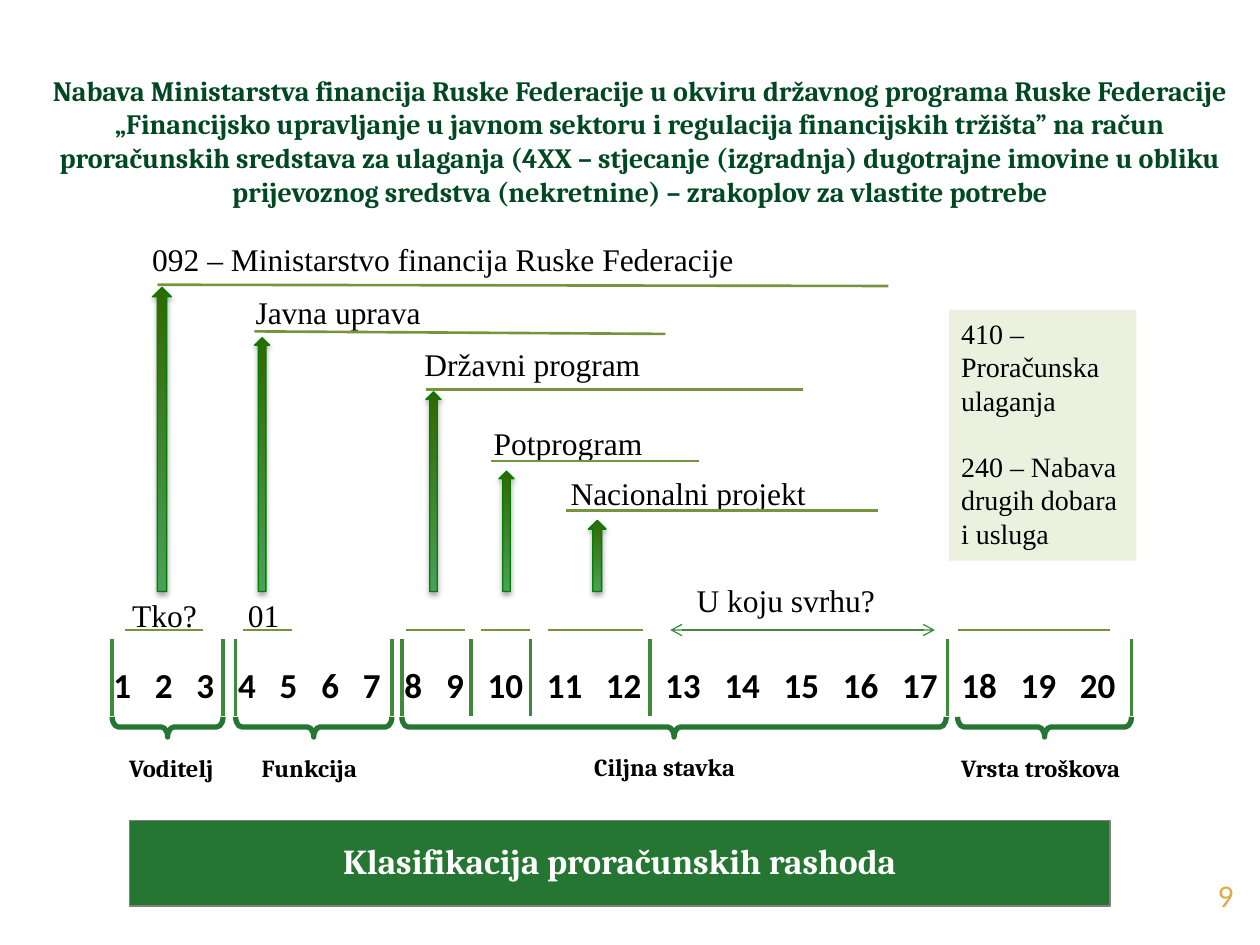
from lxml import etree
from pptx import Presentation
from pptx.dml.color import RGBColor
from pptx.enum.shapes import MSO_CONNECTOR, MSO_SHAPE
from pptx.enum.text import MSO_ANCHOR, MSO_AUTO_SIZE, PP_ALIGN
from pptx.oxml.ns import qn
from pptx.util import Inches, Pt

STRAIGHT = MSO_CONNECTOR.STRAIGHT
RECTANGLE, BRACE, ARROW = MSO_SHAPE.RECTANGLE, MSO_SHAPE.RIGHT_BRACE, MSO_SHAPE.DOWN_ARROW
TOP, MIDDLE = MSO_ANCHOR.TOP, MSO_ANCHOR.MIDDLE
LEFT, CENTER, RIGHT = PP_ALIGN.LEFT, PP_ALIGN.CENTER, PP_ALIGN.RIGHT
GROW, FIXED = MSO_AUTO_SIZE.SHAPE_TO_FIT_TEXT, MSO_AUTO_SIZE.NONE

BLACK = RGBColor(0x00, 0x00, 0x00)
WHITE = RGBColor(0xFF, 0xFF, 0xFF)
GRAY = RGBColor(0x80, 0x80, 0x80)
GOLD = RGBColor(0xDE, 0xAA, 0x46)
TITLE_GREEN = RGBColor(0x00, 0x48, 0x21)
DARK_GREEN = RGBColor(0x24, 0x76, 0x32)
DIVIDER_GREEN = RGBColor(0x3E, 0x8A, 0x3A)
OLIVE = RGBColor(0x77, 0x93, 0x3C)
PALE_GREEN = RGBColor(0xEB, 0xF1, 0xDE)
ARROW_EDGE = RGBColor(0x00, 0x80, 0x00)
ARROW_STOPS = RGBColor(0x33, 0x66, 0x00), RGBColor(0x4A, 0xA0, 0x5A)

WIDTH, HEIGHT = Inches(10), Inches(7.5)
COLUMNS, ROWS = 100, 75

TITLE_FONT = {"name": "Cambria", "size": Pt(16), "bold": True}
GROUP_FONT = {"name": "Cambria", "size": Pt(14), "bold": True}
BANNER_FONT = {"name": "Cambria", "size": Pt(20), "bold": True}
LABEL_FONT = {"name": "Times New Roman", "size": Pt(18)}
NOTE_FONT = {"name": "Times New Roman", "size": Pt(16)}
DIGIT_FONT = {"name": "Calibri", "size": Pt(20), "bold": True}
PAGE_FONT = {"name": "Calibri", "size": Pt(18)}

TITLE = (
    "Nabava Ministarstva financija Ruske Federacije u okviru državnog programa "
    "Ruske Federacije „Financijsko upravljanje u javnom sektoru i regulacija "
    "financijskih tržišta” na račun proračunskih sredstava za ulaganja (4XX – "
    "stjecanje (izgradnja) dugotrajne imovine u obliku prijevoznog sredstva "
    "(nekretnine) – zrakoplov za vlastite potrebe"
)
GROUPS = [
    ("Voditelj", (8.9, 59.3, 9.4, 3.4), (8.9, 17.7)),
    ("Funkcija", (14.7, 59.3, 19.7, 3.4), (18.7, 31.1)),
    ("Ciljna stavka", (37.4, 59.2, 30.7, 3.4), (31.9, 75.1)),
    ("Vrsta troškova", (75.1, 59.3, 15, 3.3), (76, 89.8)),
]
LEVELS = [
    ("092 – Ministarstvo financija Ruske Federacije", (11.1, 18.6, 61),
     (12.5, 22.6, 70.5, 22.7), (12.1, 22.8, 1.5)),
    ("Javna uprava", (19.3, 22.8, 35.4), (20.2, 26.3, 52.8, 26.5), (20.2, 26.8, 1.2)),
    ("Državni program", (32.7, 26.9, 33.1), (33.8, 30.9, 63.7, 30.9), (33.8, 31.1, 1.2)),
    ("Potprogram", (38.2, 33.2, 19.7), (39, 36.6, 55.5, 36.6), (39.6, 37.4, 1.2)),
    ("Nacionalni projekt", (44.3, 37.1, 26.2), (44.9, 40.5, 69.7, 40.5), (46.7, 41.3, 1.4)),
]
ANSWERS = [("Tko?", 9.5, 46.8, 8.2), ("01", 18.7, 46.8, 5.3), ("U koju svrhu?", 54.3, 45.6, 19.3)]
DIGIT_MARKS = [(9.9, 16.1), (19.3, 23.2), (32.2, 36.9), (38.2, 42.1), (43.5, 51), (76, 88.1)]
DIVIDERS = [8.9, 17.7, 18.7, 31.1, 31.9, 37.4, 42.1, 51.6, 75.2, 89.8]
ARROW_BASE, LABEL_ROWS, MARK_ROW = 46.95, 4, 50
DIVIDER_TOP, DIVIDER_BOTTOM = 50.75, 56.85
BRACE_MIDDLE, BRACE_DEPTH = 57.7, 1.6


def column(count):
    """Return the distance spanned by a number of grid columns."""
    return round(WIDTH * count / COLUMNS)


def row(count):
    """Return the distance spanned by a number of grid rows."""
    return round(HEIGHT * count / ROWS)


def grid_box(left, top, width, height):
    """Turn grid units into a shape's position and size."""
    return column(left), row(top), column(width), row(height)


def apply_format(target, values):
    """Set each attribute of the target from a dict."""
    for name, value in values.items():
        setattr(target, name, value)


def write_text(shape, lines, font, color, align=LEFT, gap=0, frame=None):
    """Write one paragraph per line, with a gap between paragraphs."""
    text_frame = shape.text_frame
    apply_format(text_frame, {"word_wrap": True, "auto_size": GROW,
                              "vertical_anchor": TOP, **(frame or {})})
    for index, line in enumerate(lines):
        paragraph = text_frame.add_paragraph() if index else text_frame.paragraphs[0]
        paragraph.alignment = align
        if index:
            paragraph.space_before = Pt(gap)
        run = paragraph.add_run()
        run.text = line
        apply_format(run.font, font)
        run.font.color.rgb = color


def add_text(slide, text, box, font, color=BLACK, align=LEFT, frame=None):
    """Add a text box with one paragraph and return it."""
    shape = slide.shapes.add_textbox(*grid_box(*box))
    write_text(shape, [text], font, color, align, frame=frame)
    return shape


def add_shape(slide, kind, box, fill=None, line=None, points=0.75):
    """Add a preset shape without a shadow and with explicit fill and line."""
    shape = slide.shapes.add_shape(kind, *grid_box(*box))
    shape.shadow.inherit = False
    if fill is None:
        shape.fill.background()
    else:
        shape.fill.solid()
        shape.fill.fore_color.rgb = fill
    if line is None:
        shape.line.fill.background()
    else:
        shape.line.color.rgb = line
        shape.line.width = Pt(points)
    return shape


def add_line(slide, ends, color, points, arrows=False):
    """Add a straight line, with open arrowheads at both ends if asked."""
    x1, y1, x2, y2 = ends
    connector = slide.shapes.add_connector(STRAIGHT, column(x1), row(y1), column(x2), row(y2))
    connector.line.color.rgb = color
    connector.line.width = Pt(points)
    properties = connector._element.spPr
    if arrows:
        for tag in ("a:headEnd", "a:tailEnd"):
            etree.SubElement(properties.find(qn("a:ln")), qn(tag), type="arrow")
    etree.SubElement(properties, qn("a:effectLst"))


def add_brace(slide, left, right):
    """Add a brace that opens upwards over the given columns."""
    span = right - left
    box = ((left + right - BRACE_DEPTH) / 2, BRACE_MIDDLE - span / 2, BRACE_DEPTH, span)
    brace = add_shape(slide, BRACE, box, line=DARK_GREEN, points=3)
    brace.rotation = 90
    brace.adjustments[0] = 0.31


def add_arrow(slide, left, top, width):
    """Add an upward gradient arrow with a soft shadow."""
    arrow = add_shape(slide, ARROW, (left, top, width, ARROW_BASE - top), line=ARROW_EDGE)
    arrow.rotation = 180
    arrow.fill.gradient()
    arrow.fill.gradient_angle = 90
    for stop, color in zip(arrow.fill.gradient_stops, ARROW_STOPS):
        stop.color.rgb = color
    effects = arrow._element.spPr.find(qn("a:effectLst"))
    shadow = etree.SubElement(effects, qn("a:outerShdw"), blurRad=str(Pt(3.1)),
                              dist=str(Pt(1.8)), dir="5400000", rotWithShape="0")
    color = etree.SubElement(shadow, qn("a:srgbClr"), val=str(BLACK))
    etree.SubElement(color, qn("a:alpha"), val="35000")


def add_digits(slide):
    """Add the row of digit positions, spaced by tab stops."""
    text = "\t".join(str(number) for number in range(1, 21))
    box = add_text(slide, text, (7.5, 52.2, 84, 4.4), DIGIT_FONT,
                   frame={"margin_left": column(1.5)})
    properties = box.text_frame.paragraphs[0]._p.get_or_add_pPr()
    tabs = etree.SubElement(properties, qn("a:tabLst"))
    for index in range(1, 20):
        position = column(3.3 * min(index, 9) + 4.7 * max(index - 9, 0))
        etree.SubElement(tabs, qn("a:tab"), pos=str(position), algn="l")


def main():
    """Build the slide and save it."""
    presentation = Presentation()
    presentation.slide_width, presentation.slide_height = WIDTH, HEIGHT
    slide = presentation.slides.add_slide(presentation.slide_layouts[6])
    add_text(slide, TITLE, (2, 2.1, 97.6, 18.1), TITLE_FONT, TITLE_GREEN, CENTER,
             {"vertical_anchor": MIDDLE, "auto_size": FIXED})
    banner = add_shape(slide, RECTANGLE, (10.3, 65.1, 77.8, 6.8), DARK_GREEN, GRAY)
    write_text(banner, ["Klasifikacija proračunskih rashoda"], BANNER_FONT, WHITE, CENTER,
               frame={"vertical_anchor": MIDDLE, "auto_size": FIXED, "margin_top": row(0.1)})
    add_digits(slide)
    for name, box, span in GROUPS:
        add_text(slide, name, box, GROUP_FONT, align=CENTER)
        add_brace(slide, *span)
    for name, (left, top, width), underline, arrow in LEVELS:
        add_arrow(slide, *arrow)
        add_text(slide, name, (left, top, width, LABEL_ROWS), LABEL_FONT)
        add_line(slide, underline, OLIVE, 1.5)
    for name, left, top, width in ANSWERS:
        add_text(slide, name, (left, top, width, LABEL_ROWS), LABEL_FONT)
    for left, right in DIGIT_MARKS:
        add_line(slide, (left, MARK_ROW, right, MARK_ROW), OLIVE, 1.5)
    for left in DIVIDERS:
        add_line(slide, (left, DIVIDER_TOP, left, DIVIDER_BOTTOM), DIVIDER_GREEN, 2)
    add_line(slide, (53.2, MARK_ROW, 74.2, MARK_ROW), DIVIDER_GREEN, 0.75, arrows=True)
    note = add_shape(slide, RECTANGLE, (75.3, 24.6, 14.9, 19.9), PALE_GREEN)
    write_text(note, ["410 – Proračunska ulaganja", "240 – Nabava drugih dobara i usluga"],
               NOTE_FONT, BLACK, gap=18.4)
    add_text(slide, "9", (93.5, 69, 5.4, 4), PAGE_FONT, GOLD, RIGHT, {"auto_size": FIXED})
    presentation.save("out.pptx")


if __name__ == "__main__":
    main()
